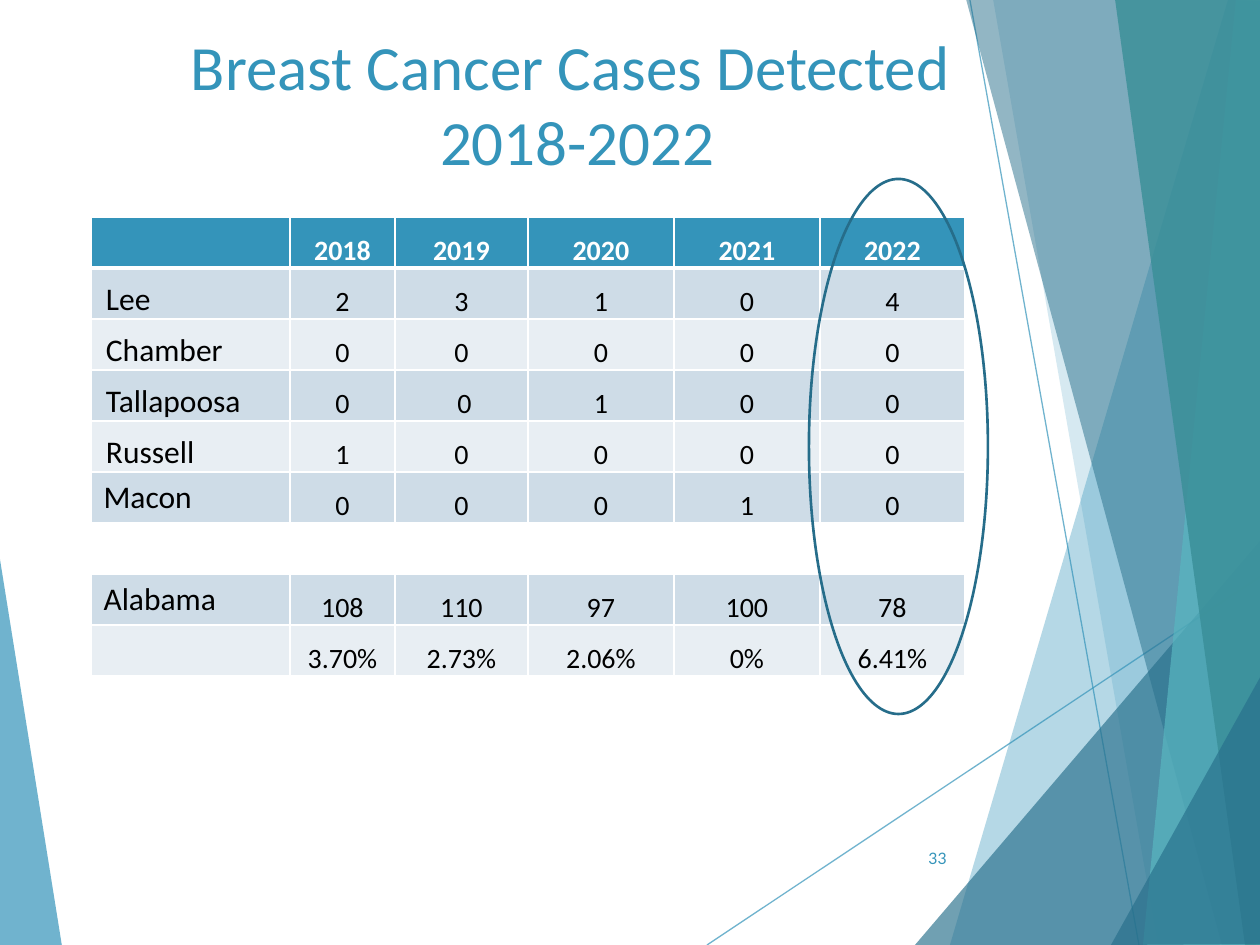
from dataclasses import dataclass

from lxml.etree import SubElement
from pptx import Presentation
from pptx.dml.color import RGBColor
from pptx.enum.shapes import MSO_CONNECTOR, MSO_SHAPE
from pptx.enum.text import MSO_ANCHOR, PP_ALIGN
from pptx.oxml.ns import qn
from pptx.util import Emu, Pt


@dataclass(frozen=True)
class Theme:
    accent: RGBColor = RGBColor.from_string("3494BA")
    dark: RGBColor = RGBColor.from_string("276F8B")
    teal: RGBColor = RGBColor.from_string("58B6C0")
    deep_teal: RGBColor = RGBColor.from_string("3A8F98")
    outline: RGBColor = RGBColor.from_string("266D8A")
    band_dark: RGBColor = RGBColor.from_string("CEDCE7")
    band_light: RGBColor = RGBColor.from_string("E8EEF3")
    white: RGBColor = RGBColor.from_string("FFFFFF")
    black: RGBColor = RGBColor.from_string("000000")
    body_font: str = "Calibri"
    number_font: str = "Lato"
    title_size: int = Pt(36)
    label_size: int = Pt(18)
    value_size: int = Pt(16)
    number_size: int = Pt(9)


theme = Theme()
SCALE = 914400 / 126


def px(*lengths):
    return [Emu(round(length * SCALE)) for length in lengths]


def apply_format(target, values):
    for name, value in values.items():
        setattr(target, name, value)


presentation = Presentation()
apply_format(presentation, dict(zip(("slide_width", "slide_height"), px(1260, 945))))
slide = presentation.slides.add_slide(presentation.slide_layouts[5])
shapes = slide.shapes

decorations = [
    ([(-1, 553), (62, 946), (-1, 945)], theme.accent, 70),
    ([(707, 945), (1261, 576)], theme.accent, 70),
    ([(970, 0), (1139, 945)], theme.accent, 70),
    ([(1228, 0), (950, 945), (1262, 946), (1261, 1)], theme.accent, 36),
    ([(993, -1), (1158, 945), (1261, 945), (1261, -1)], theme.accent, 20),
    ([(915, 945), (1260, 541), (1261, 945)], theme.dark, 66),
    ([(966, -1), (1222, 945), (1261, 944), (1261, -1)], theme.dark, 50),
    ([(1236, -1), (1143, 945), (1261, 945), (1260, -1)], theme.teal, 70),
    ([(1115, -1), (1245, 945), (1262, 945), (1260, -1)], theme.deep_teal, 82),
    ([(1111, 945), (1262, 674), (1262, 944)], theme.dark, 66),
]
for points, color, opacity in decorations:
    if len(points) == 2:
        shape = shapes.add_connector(MSO_CONNECTOR.STRAIGHT, *px(*points[0], *points[1]))
        shape.line.color.rgb = color
        shape.line.width = Pt(0.75)
        SubElement(shape._element.spPr, qn("a:effectLst"))
    else:
        builder = shapes.build_freeform(*points[0], scale=SCALE)
        builder.add_line_segments(points[1:], close=True)
        shape = builder.convert_to_shape()
        shape.fill.solid()
        shape.fill.fore_color.rgb = color
        shape.line.fill.background()
        shape.shadow.inherit = False
    for color_element in shape._element.spPr.iter(qn("a:srgbClr")):
        SubElement(color_element, qn("a:alpha"), val=str(opacity * 1000))

title = shapes.title
shapes._spTree.append(title._element)
apply_format(title, dict(zip(("left", "top", "width", "height"), px(84, 21, 987, 189))))
title.text_frame.text = "Breast Cancer Cases Detected \v2018-2022"
apply_format(title.text_frame, {"vertical_anchor": MSO_ANCHOR.TOP, "word_wrap": True})
paragraph = title.text_frame.paragraphs[0]
paragraph.alignment = PP_ALIGN.CENTER
for run in paragraph.runs:
    apply_format(run.font, {"name": theme.body_font, "size": theme.title_size})
    run.font.color.rgb = theme.accent

page_number = shapes.add_textbox(*px(888, 833, 71, 50))
apply_format(page_number.text_frame, {"vertical_anchor": MSO_ANCHOR.MIDDLE, "word_wrap": True})
paragraph = page_number.text_frame.paragraphs[0]
paragraph.alignment = PP_ALIGN.RIGHT
run = paragraph.add_run()
run.text = "33"
apply_format(run.font, {"name": theme.number_font, "size": theme.number_size})
run.font.color.rgb = theme.accent

rows = [
    ("", "2018", "2019", "2020", "2021", "2022"),
    ("Lee", "2", "3", "1", "0", "4"),
    ("Chamber", "0", "0", "0", "0", "0"),
    ("Tallapoosa", "0", " 0", "1", "0", "0"),
    ("Russell", "1", "0", "0", "0", "0"),
    ("Macon", "0", "0", "0", "1", "0"),
    ("",) * 6,
    ("Alabama", "108", "110", "97", "100", "78"),
    ("", "3.70%", "2.73%", "2.06%", "0%", "6.41%"),
]
column_widths = px(199, 105, 133, 146, 146, 145)
row_height = 51
top_labels = ("Macon", "Alabama")
margins = ("margin_left", "margin_right", "margin_top", "margin_bottom")
value_margins = dict(zip(margins, px(1, 1, 1, 0)))
label_margins = dict(zip(margins, px(15, 1, 1, 0)))

table = shapes.add_table(
    len(rows), len(column_widths), *px(91, 217, 874, row_height * len(rows))
).table
table.horz_banding = False
for column, width in zip(table.columns, column_widths):
    column.width = width

for row_index, values in enumerate(rows):
    table.rows[row_index].height = px(row_height)[0]
    is_header = row_index == 0
    for column_index, value in enumerate(values):
        cell = table.cell(row_index, column_index)
        is_label = column_index == 0
        properties = cell._tc.get_or_add_tcPr()
        for side in ("L", "R", "T", "B"):
            heavy = (row_index, side) in ((0, "B"), (1, "T"))
            border = SubElement(properties, qn(f"a:ln{side}"), w=str(Pt(3 if heavy else 1)))
            border_fill = SubElement(border, qn("a:solidFill"))
            SubElement(border_fill, qn("a:srgbClr"), val=str(theme.white))
        if any(values):
            cell.fill.solid()
            band = theme.band_dark if row_index % 2 else theme.band_light
            cell.fill.fore_color.rgb = theme.accent if is_header else band
        else:
            cell.fill.background()
        if not value:
            continue
        if value not in top_labels:
            cell.vertical_anchor = MSO_ANCHOR.BOTTOM
            apply_format(cell, label_margins if is_label else value_margins)
        paragraph = cell.text_frame.paragraphs[0]
        paragraph.alignment = PP_ALIGN.LEFT if is_label else PP_ALIGN.CENTER
        run = paragraph.add_run()
        run.text = value
        apply_format(run.font, {
            "name": theme.body_font,
            "size": theme.label_size if is_label else theme.value_size,
            "bold": is_header,
        })
        run.font.color.rgb = theme.white if is_header else theme.black

highlight = shapes.add_shape(MSO_SHAPE.OVAL, *px(809, 179, 179, 535))
highlight.fill.background()
highlight.line.color.rgb = theme.outline
highlight.line.width = Pt(1.5)
highlight.shadow.inherit = False

presentation.save("out.pptx")
